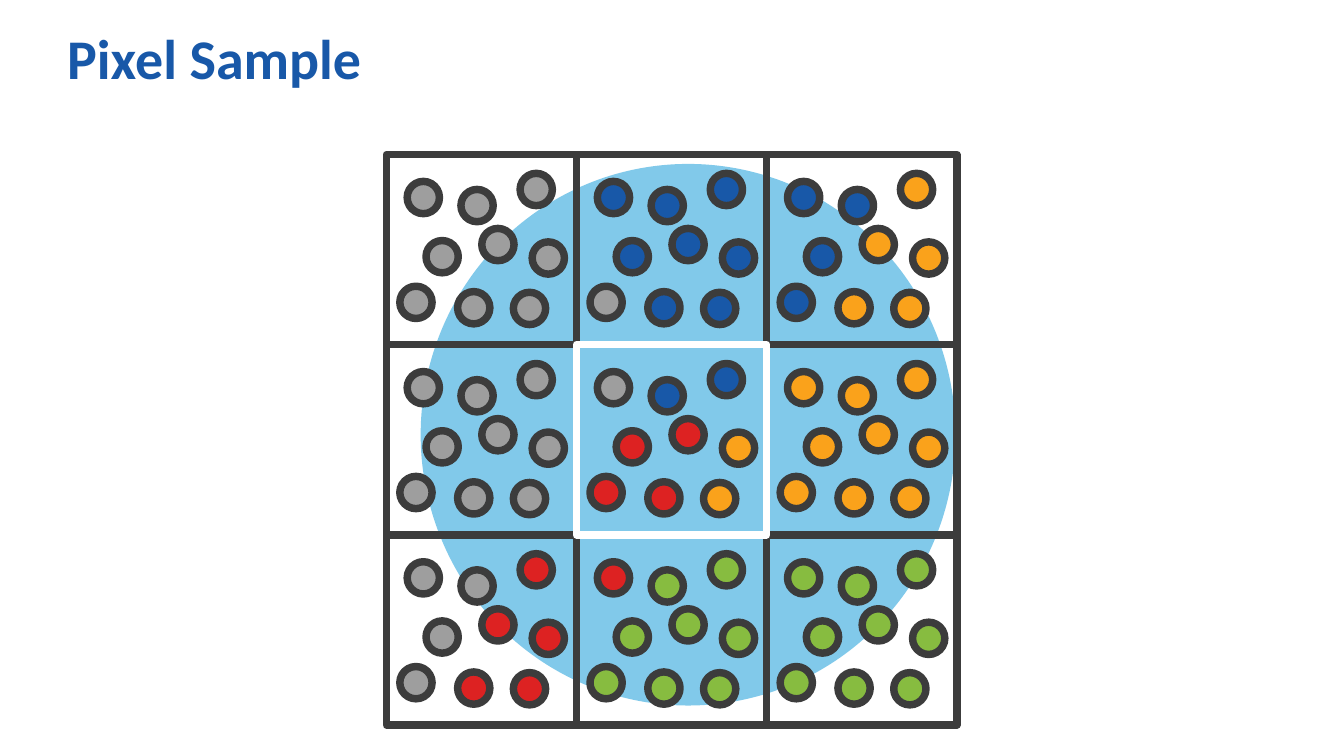
from lxml import etree
from pptx import Presentation
from pptx.dml.color import RGBColor
from pptx.enum.shapes import MSO_SHAPE
from pptx.enum.text import MSO_ANCHOR, PP_ALIGN
from pptx.oxml.ns import qn
from pptx.util import Pt

RECTANGLE, OVAL = MSO_SHAPE.RECTANGLE, MSO_SHAPE.OVAL
TOP, LEFT = MSO_ANCHOR.TOP, PP_ALIGN.LEFT
PX = 4572  # EMU per px, 200 px to the inch

DARK, WHITE, BLUE = "3C3C3C", "FFFFFF", "1858A8"
SAMPLE_COLORS = {"B": BLUE, "G": "9E9E9E", "O": "FAA21B", "R": "DD2222", "V": "87BC40"}

GRID_LEFT, GRID_TOP, CELL, DOT = 575, 230, 283, 48
# Sample positions inside every pixel, and their colours pixel by pixel
SAMPLE_OFFSETS = [(31, 40), (111, 52), (199, 28),
                  (59, 128), (142, 110), (217, 130),
                  (20, 196), (106, 204), (189, 205)]
PIXELS = [["GGGGGGGGG", "BBBBBBGBB", "BBOBOOBOO"],
          ["GGGGGGGGG", "GBBRRORRO", "OOOOOOOOO"],
          ["GGRGRRGRR", "RVVVVVVVV", "VVVVVVVVV"]]


def rgb(color):
    return RGBColor.from_string(color)


def add_figure(kind, left, top, width, height, fill=None, line=None):
    """Add a preset shape without shadow; fill and line are optional colours."""
    shape = slide.shapes.add_shape(kind, left * PX, top * PX, width * PX, height * PX)
    shape.shadow.inherit = False
    if fill:
        shape.fill.solid()
        shape.fill.fore_color.rgb = rgb(fill)
    else:
        shape.fill.background()
    if line:
        shape.line.color.rgb = rgb(line)
        shape.line.width = Pt(4)
    else:
        shape.line.fill.background()
    return shape


presentation = Presentation()
presentation.slide_width, presentation.slide_height = 2000 * PX, 1125 * PX
slide = presentation.slides.add_slide(presentation.slide_layouts[5])

title = slide.shapes.title
title.left, title.top, title.width, title.height = 100 * PX, 46 * PX, 1800 * PX, 188 * PX
frame = title.text_frame
frame.text = "Pixel Sample"
frame.margin_left = frame.margin_top = frame.margin_right = frame.margin_bottom = 0
frame.vertical_anchor = TOP
paragraph = frame.paragraphs[0]
paragraph.alignment = LEFT
paragraph.line_spacing = 0.9
font = paragraph.runs[0].font
font.name, font.size, font.bold = "Calibri", Pt(30), True
font.color.rgb = rgb(BLUE)

filter_circle = add_figure(OVAL, 626, 244, 796, 806, fill="0595D6")
circle_color = filter_circle._element.spPr.find(qn("a:solidFill"))[0]
etree.SubElement(circle_color, qn("a:alpha")).set("val", "50000")

for row, pixel_row in enumerate(PIXELS):
    for column, samples in enumerate(pixel_row):
        left, top = GRID_LEFT + column * CELL, GRID_TOP + row * CELL
        add_figure(RECTANGLE, left, top, CELL, CELL, line=DARK)
        for (x, y), sample in zip(SAMPLE_OFFSETS, samples):
            add_figure(OVAL, left + x, top + y, DOT, DOT, SAMPLE_COLORS[sample], DARK)

# The pixel being filtered stands out in white
add_figure(RECTANGLE, GRID_LEFT + CELL, GRID_TOP + CELL, CELL, CELL, line=WHITE)

presentation.save("out.pptx")
